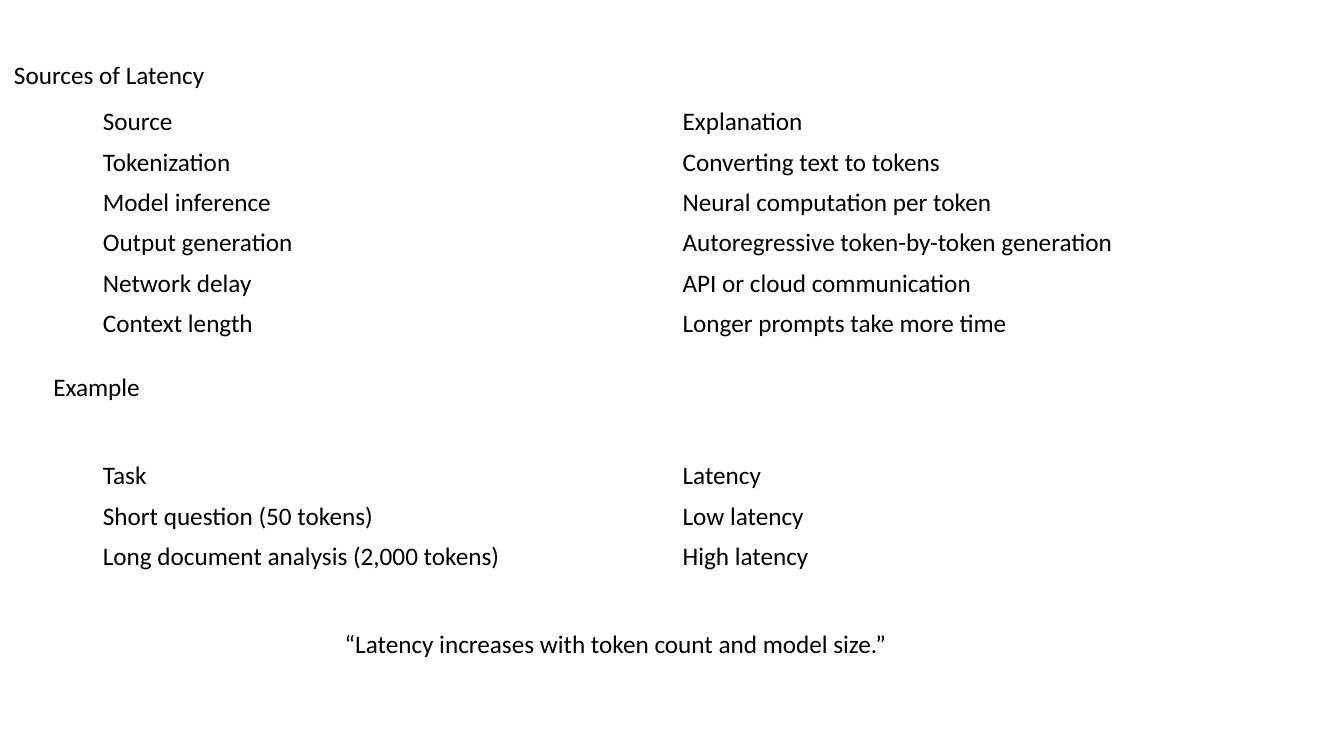
from pptx import Presentation
from pptx.dml.color import RGBColor
from pptx.enum.text import MSO_ANCHOR, MSO_AUTO_SIZE
from pptx.util import Inches, Pt

MIDDLE = MSO_ANCHOR.MIDDLE
GROW = MSO_AUTO_SIZE.SHAPE_TO_FIT_TEXT


def color(hex_value):
    return RGBColor.from_string(hex_value)


class SlideBuilder:
    font_name = "Calibri"
    font_size = 18
    text_color = "000000"
    line_height = 0.4

    def __init__(self, slide):
        self.s = slide

    def style(self, tf):
        for p in tf.paragraphs:
            for r in p.runs:
                r.font.name = self.font_name
                r.font.size = Pt(self.font_size)
                r.font.bold = False
                r.font.color.rgb = color(self.text_color)

    def text(self, text, left, top, width=6.68):
        box = self.s.shapes.add_textbox(
            Inches(left), Inches(top), Inches(width), Inches(self.line_height))
        tf = box.text_frame
        tf.word_wrap = True
        tf.auto_size = GROW
        tf.text = text
        self.style(tf)

    def table(self, rows, left, top, width=11.5):
        n_rows, n_cols = len(rows), len(rows[0])
        frame = self.s.shapes.add_table(
            n_rows, n_cols, Inches(left), Inches(top),
            Inches(width), Inches(self.line_height * n_rows))
        table = frame.table
        table.first_row = True
        table.horz_banding = False
        for i, row in enumerate(rows):
            for j, value in enumerate(row):
                cell = table.cell(i, j)
                cell.fill.background()
                cell.vertical_anchor = MIDDLE
                cell.text_frame.text = value
                self.style(cell.text_frame)


def main():
    prs = Presentation()
    prs.slide_width, prs.slide_height = Inches(13.33), Inches(7.5)
    slide = SlideBuilder(prs.slides.add_slide(prs.slide_layouts[6]))

    # Sources of latency
    slide.text("Sources of Latency", 0.04, 0.54)
    slide.table([
        ("Source", "Explanation"),
        ("Tokenization", "Converting text to tokens"),
        ("Model inference", "Neural computation per token"),
        ("Output generation", "Autoregressive token-by-token generation"),
        ("Network delay", "API or cloud communication"),
        ("Context length", "Longer prompts take more time"),
    ], 0.92, 1.01)

    # Example
    slide.text("Example", 0.43, 3.63)
    slide.table([
        ("Task", "Latency"),
        ("Short question (50 tokens)", "Low latency"),
        ("Long document analysis (2,000 tokens)", "High latency"),
    ], 0.92, 4.52)

    # Takeaway
    slide.text("“Latency increases with token count and model size.”", 3.32, 6.18)

    prs.save("out.pptx")


if __name__ == "__main__":
    main()
